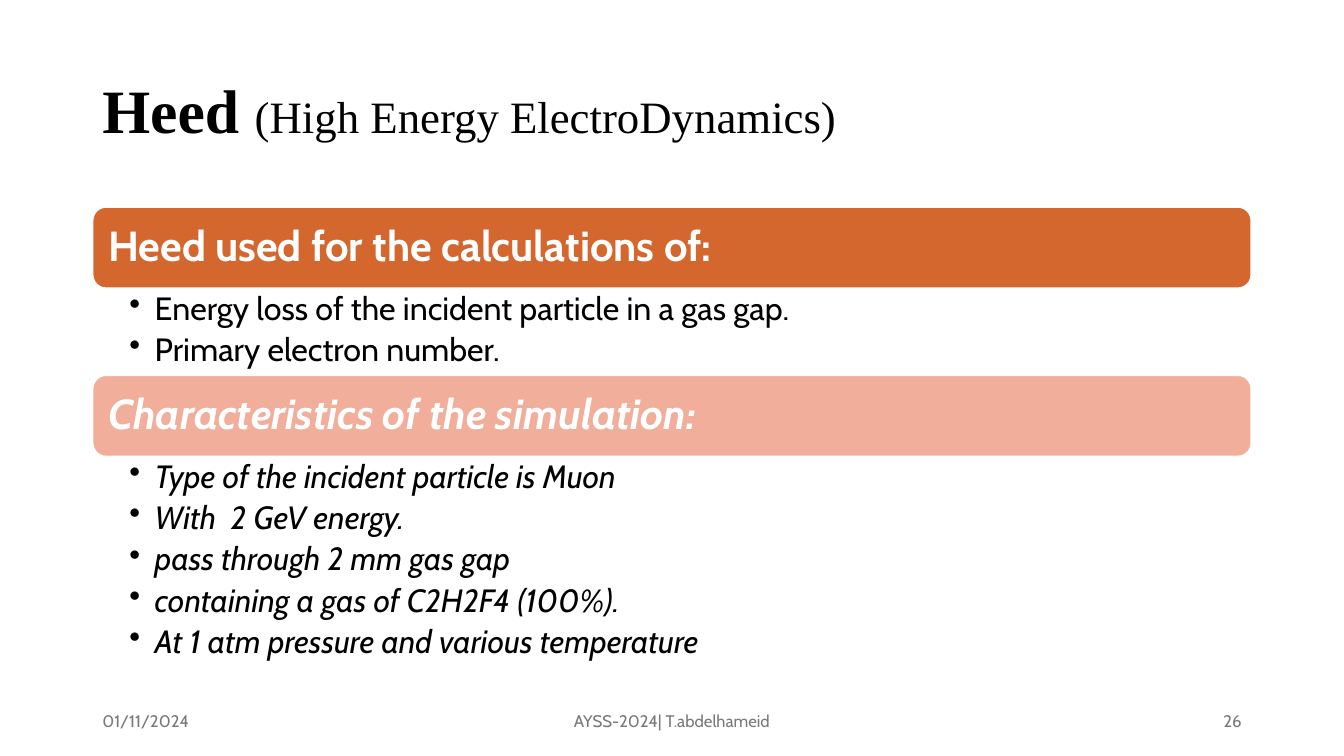
from lxml.etree import SubElement
from pptx import Presentation
from pptx.dml.color import RGBColor
from pptx.enum.shapes import MSO_SHAPE
from pptx.enum.text import MSO_ANCHOR, PP_ALIGN
from pptx.oxml.ns import qn
from pptx.util import Cm, Pt

HUES = {
    "ink": "000000",
    "paper": "FFFFFF",
    "rust": "D3672D",
    "rose": "F0AE9B",
    "gray": "797979",
}
LEFT, WIDTH = 2.33, 29.21
BAND = 2.06
GROUPS = [
    (5.21, 2.21, "rust", False, "Heed used for the calculations of:", [
        "Energy loss of the incident particle in a gas gap.",
        "Primary electron number.",
    ]),
    (9.45, 5.51, "rose", True, "Characteristics of the simulation:", [
        "Type of the incident particle is Muon",
        "With  2 GeV energy.",
        "pass through 2 mm gas gap",
        "containing a gas of C2H2F4 (100%).",
        "At 1 atm pressure and various temperature",
    ]),
]
FOOTER = [
    (LEFT, 7.62, "01/11/2024", PP_ALIGN.LEFT),
    (11.22, 11.43, "AYSS-2024| T.abdelhameid", PP_ALIGN.CENTER),
    (23.92, 7.62, "26", PP_ALIGN.RIGHT),
]


def hue(name):
    return RGBColor.from_string(HUES[name])


def add_run(para, text, size, color="ink", face="Cabin", bold=False, slant=False):
    run = para.add_run()
    run.text = text
    font = run.font
    font.name, font.size = face, Pt(size)
    font.bold, font.italic = bold, slant
    font.color.rgb = hue(color)


def add_box(slide, left, top, width, height, anchor=MSO_ANCHOR.MIDDLE):
    box = slide.shapes.add_textbox(Cm(left), Cm(top), Cm(width), Cm(height))
    frame = box.text_frame
    frame.word_wrap = True
    frame.vertical_anchor = anchor
    return frame


def add_title(slide):
    para = add_box(slide, LEFT, 1.02, WIDTH, 3.68).paragraphs[0]
    para.line_spacing = 0.9
    add_run(para, "Heed ", 44, face="Times New Roman", bold=True)
    add_run(para, "(High Energy ElectroDynamics)", 32, face="Times New Roman")


def add_band(slide, top, color, text, slant):
    band = slide.shapes.add_shape(
        MSO_SHAPE.ROUNDED_RECTANGLE, Cm(LEFT), Cm(top), Cm(WIDTH), Cm(BAND))
    band.shadow.inherit = False
    band.fill.solid()
    band.fill.fore_color.rgb = hue(color)
    band.line.color.rgb = hue("paper")
    band.line.width = Pt(1.5)
    frame = band.text_frame
    frame.margin_left = frame.margin_right = Cm(0.3)
    frame.vertical_anchor = MSO_ANCHOR.MIDDLE
    para = frame.paragraphs[0]
    para.alignment = PP_ALIGN.LEFT
    para.line_spacing = 0.9
    add_run(para, text, 30, "paper", bold=True, slant=slant)


def add_list(slide, top, height, items, slant):
    frame = add_box(slide, LEFT, top, WIDTH, height, MSO_ANCHOR.TOP)
    frame.margin_left, frame.margin_right = Cm(0.93), Cm(0.58)
    frame.margin_top = frame.margin_bottom = Cm(0.1)
    for rank, item in enumerate(items):
        para = frame.add_paragraph() if rank else frame.paragraphs[0]
        para.line_spacing = 0.9
        para.space_after = Pt(4.6)
        props = para._p.get_or_add_pPr()
        props.set("marL", str(Cm(0.64)))
        props.set("indent", str(-Cm(0.64)))
        SubElement(props, qn("a:buChar")).set("char", "•")
        add_run(para, item, 23, slant=slant)


def add_foot(slide, left, width, text, align):
    para = add_box(slide, left, 17.65, width, 1.02).paragraphs[0]
    para.alignment = align
    add_run(para, text, 12, "gray")


def main():
    deck = Presentation()
    deck.slide_width, deck.slide_height = Cm(33.87), Cm(19.05)
    slide = deck.slides.add_slide(deck.slide_layouts[6])
    add_title(slide)
    for top, height, color, slant, head, items in GROUPS:
        add_band(slide, top, color, head, slant)
        add_list(slide, top + BAND, height, items, slant)
    for part in FOOTER:
        add_foot(slide, *part)
    deck.save("out.pptx")


if __name__ == "__main__":
    main()
